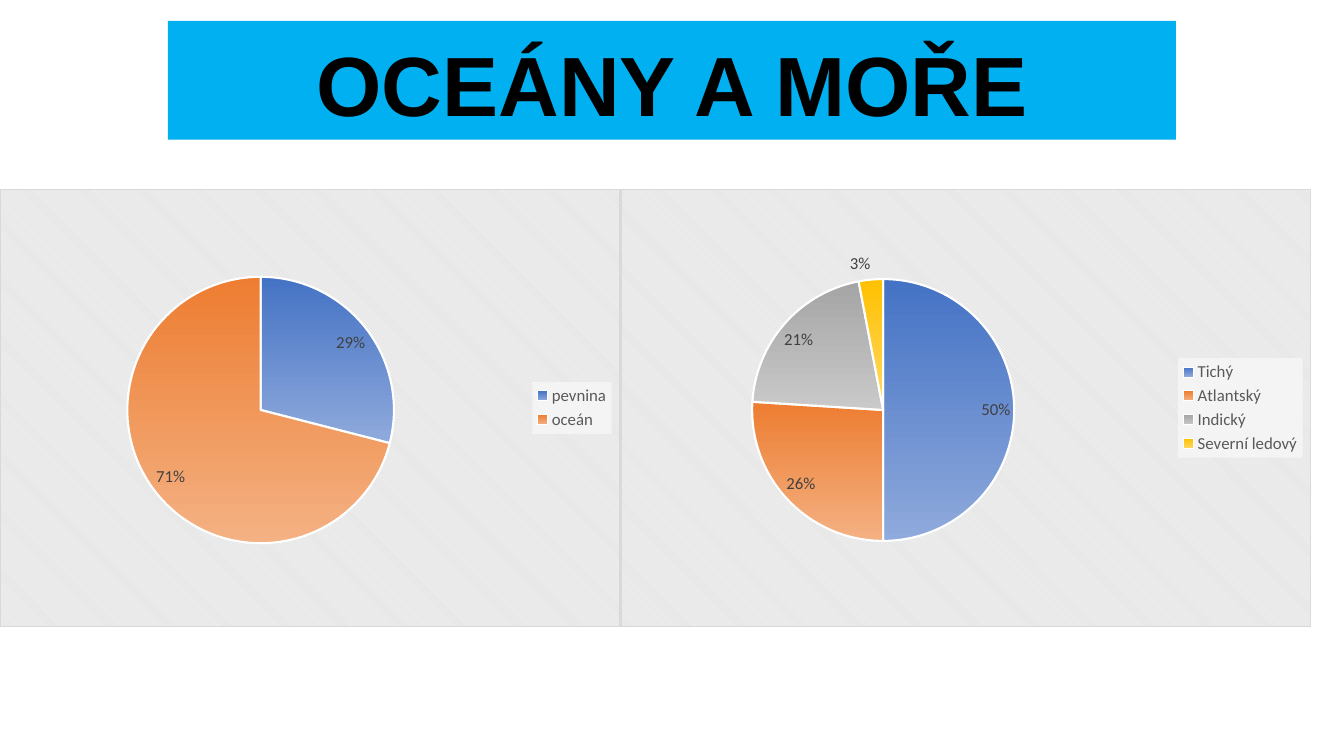
from lxml.etree import fromstring
from pptx import Presentation
from pptx.chart.data import CategoryChartData
from pptx.dml.color import RGBColor
from pptx.enum.chart import XL_CHART_TYPE, XL_LABEL_POSITION, XL_LEGEND_POSITION
from pptx.enum.shapes import MSO_SHAPE
from pptx.enum.text import MSO_ANCHOR, PP_ALIGN
from pptx.oxml.ns import qn
from pptx.util import Pt

PX = 9525  # 96 px to the inch
HUES = {
    "sky": "00B0F0", "black": "000000", "white": "FFFFFF", "pale": "E6E6E6",
    "edge": "D9D9D9", "label": "404040", "key": "595959",
}
SLICES = [("4472C4", "8FAADC"), ("ED7D31", "F4B183"),
          ("A5A5A5", "C9C9C9"), ("FFC000", "FFD966")]
SPACES = ('xmlns:c="http://schemas.openxmlformats.org/drawingml/2006/chart" '
          'xmlns:a="http://schemas.openxmlformats.org/drawingml/2006/main"')


def rgb(name):
    return RGBColor.from_string(HUES[name])


def style(font, size, hue, face="Calibri", bold=False):
    font.size, font.name, font.bold = Pt(size), face, bold
    font.color.rgb = rgb(hue)


def write(shape, text, size, hue, face, bold):
    frame = shape.text_frame
    frame.word_wrap = True
    frame.vertical_anchor = MSO_ANCHOR.BOTTOM
    para = frame.paragraphs[0]
    para.alignment = PP_ALIGN.CENTER
    para.line_spacing = 0.9
    run = para.add_run()
    run.text = text
    style(run.font, size, hue, face, bold)


def props(inner):
    return fromstring(f"<c:spPr {SPACES}>{inner}</c:spPr>")


def solid(hue, extra=""):
    return f'<a:solidFill><a:srgbClr val="{HUES[hue]}">{extra}</a:srgbClr></a:solidFill>'


def title(slide, box, text):
    bar = slide.shapes.add_shape(MSO_SHAPE.RECTANGLE, *[n * PX for n in box])
    bar.shadow.inherit = False
    bar.fill.solid()
    bar.fill.fore_color.rgb = rgb("sky")
    bar.line.fill.background()
    write(bar, text, size=60, hue="black", face="Arial", bold=True)


def place(chart, plot):
    """Fix the inner plot area, given as shares of the chart."""
    area = chart._chartSpace.chart.plotArea
    for old in area.findall(qn("c:layout")):
        area.remove(old)
    modes = '<c:xMode val="edge"/><c:yMode val="edge"/>'
    sides = "".join(f'<c:{k} val="{v}"/>' for k, v in zip("xywh", plot))
    area.insert(0, fromstring(
        f'<c:layout {SPACES}><c:manualLayout><c:layoutTarget val="inner"/>'
        f"{modes}{sides}</c:manualLayout></c:layout>"))


def pie(slide, box, plot, data, percent):
    table = CategoryChartData(number_format="0%" if not percent else "General")
    table.categories = list(data)
    table.add_series("Series 1", list(data.values()))
    chart = slide.shapes.add_chart(
        XL_CHART_TYPE.PIE, *[n * PX for n in box], table).chart
    chart.has_title = False
    style(chart.font, 10, "black")
    place(chart, plot)

    # Striped backdrop with a thin border
    chart._chartSpace.chart.addnext(props(
        '<a:pattFill prst="dkDnDiag">'
        f'<a:fgClr><a:srgbClr val="{HUES["white"]}"/></a:fgClr>'
        f'<a:bgClr><a:srgbClr val="{HUES["pale"]}"/></a:bgClr></a:pattFill>'
        f'<a:ln w="9525">{solid("edge")}</a:ln>'))

    # Legend on a half-clear white panel
    chart.has_legend = True
    legend = chart.legend
    legend.position = XL_LEGEND_POSITION.RIGHT
    legend.include_in_layout = False
    style(legend.font, 12, "key")
    legend._element.find(qn("c:txPr")).addprevious(
        props(solid("white", '<a:alpha val="50000"/>')))

    # Slices shaded from top to bottom
    pies = chart.plots[0]
    pies.vary_by_categories = True
    for i, shades in enumerate(SLICES[:len(data)]):
        part = pies.series[0].points[i].format
        part.fill.gradient()
        part.fill.gradient_angle = 270
        for stop, shade in zip(part.fill.gradient_stops, shades):
            stop.color.rgb = RGBColor.from_string(shade)
        part.line.color.rgb = rgb("white")
        part.line.width = Pt(1.5)

    # Labels
    labels = pies.series[0].data_labels
    labels.show_value, labels.show_percentage = not percent, percent
    labels.number_format, labels.number_format_is_linked = "0%", False
    labels.position = XL_LABEL_POSITION.BEST_FIT
    style(labels.font, 12, "label")


def main():
    deck = Presentation()
    deck.slide_width, deck.slide_height = 1280 * PX, 720 * PX
    slide = deck.slides.add_slide(deck.slide_layouts[6])
    title(slide, (160, 20, 960, 113), "OCEÁNY A MOŘE")
    top, high, split = 180, 417, 591
    pie(slide, (0, top, split, high), (0.2, 0.2, 0.44, 0.61),
        {"pevnina": 0.29, "oceán": 0.71}, percent=False)
    pie(slide, (split, top, 658, high), (0.19, 0.2, 0.38, 0.61),
        {"Tichý": 50, "Atlantský": 26, "Indický": 21, "Severní ledový": 3},
        percent=True)
    deck.save("out.pptx")


if __name__ == "__main__":
    main()
